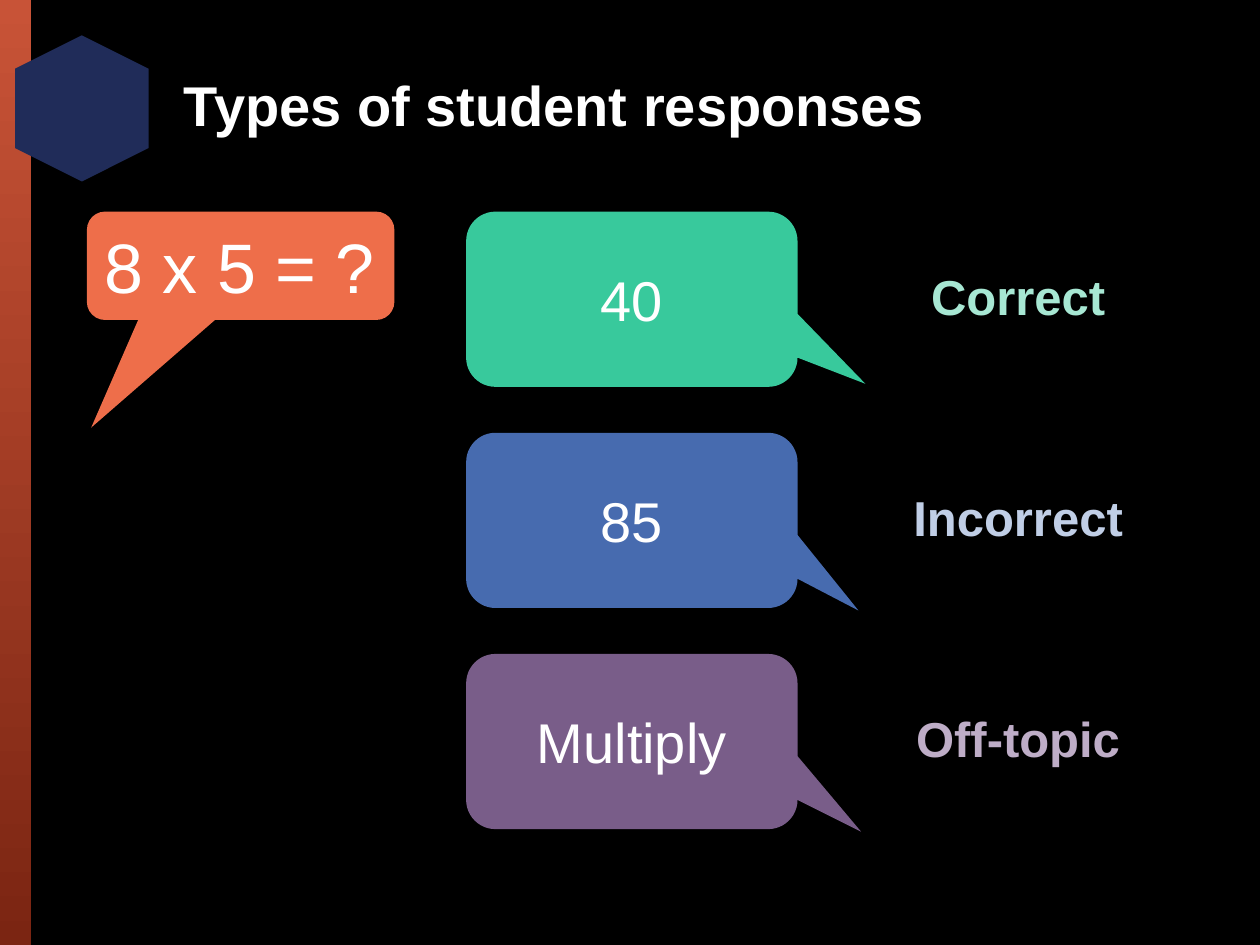
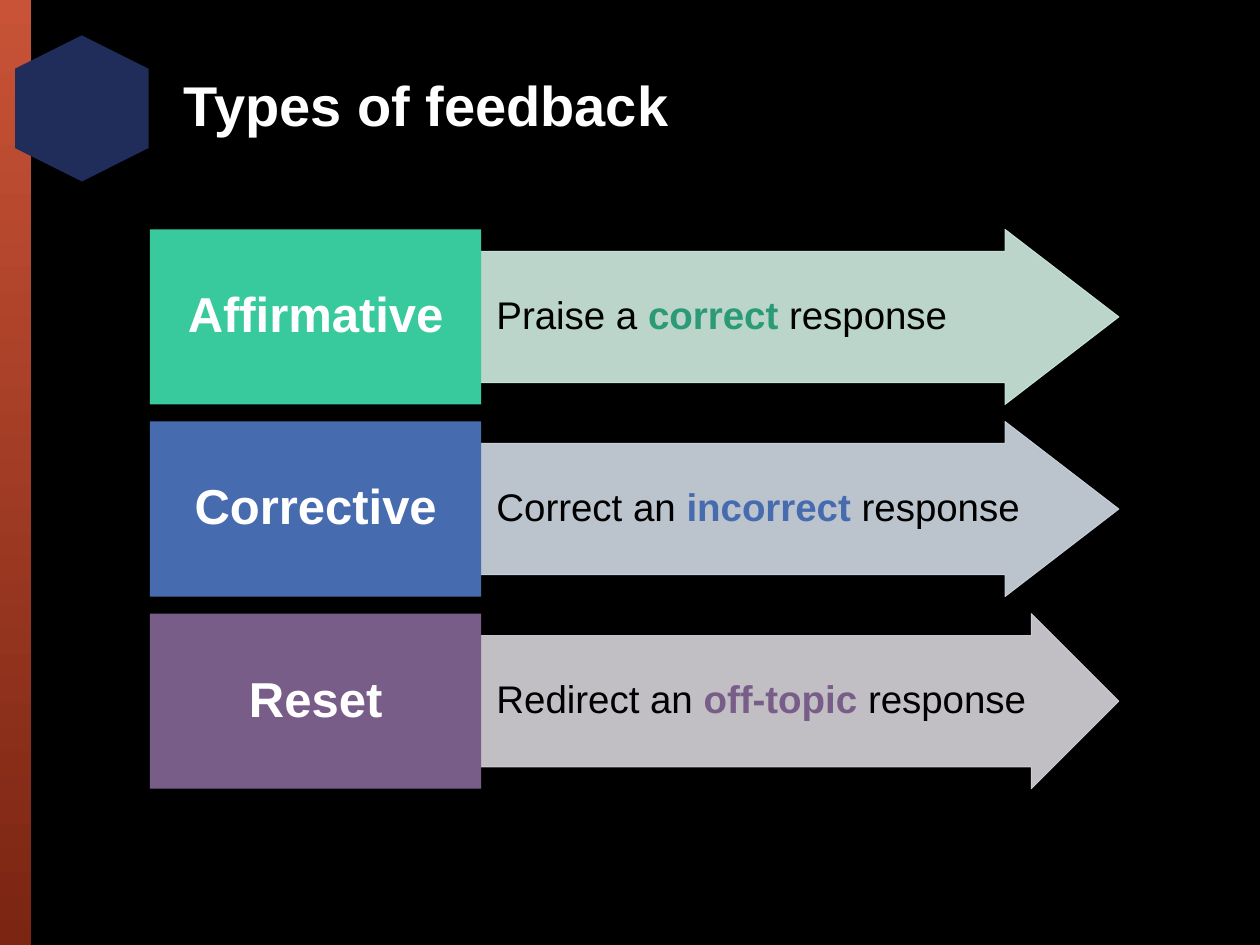
from lxml import etree
from pptx import Presentation
from pptx.dml.color import RGBColor
from pptx.enum.shapes import MSO_SHAPE as Shape
from pptx.enum.text import MSO_ANCHOR as Anchor, MSO_AUTO_SIZE as AutoSize, PP_ALIGN as Align
from pptx.oxml.ns import qn
from pptx.util import Inches, Pt

FONT = "Arial"
BLACK = RGBColor(0x00, 0x00, 0x00)
WHITE = RGBColor(0xFF, 0xFF, 0xFF)
BAND_TOP = RGBColor(0xC8, 0x53, 0x37)
BAND_BOTTOM = RGBColor(0x7B, 0x25, 0x12)
NAVY = RGBColor(0x20, 0x2C, 0x59)
ORANGE = RGBColor(0xEE, 0x6E, 0x4A)
GREEN = RGBColor(0x38, 0xC9, 0x9C)
DARK_GREEN = RGBColor(0x2A, 0x9A, 0x77)
LIGHT_GREEN = RGBColor(0xA7, 0xE7, 0xD3)
PALE_GREEN = RGBColor(0xD0, 0xED, 0xE1)
BLUE = RGBColor(0x47, 0x6B, 0xAF)
LIGHT_BLUE = RGBColor(0xC0, 0xCE, 0xE6)
PALE_BLUE = RGBColor(0xD0, 0xD9, 0xE4)
PURPLE = RGBColor(0x79, 0x5D, 0x89)
LIGHT_PURPLE = RGBColor(0xBE, 0xAD, 0xC7)
PALE_PURPLE = RGBColor(0xD7, 0xD3, 0xDA)

ROW_WIDTH, ROW_HEIGHT = 2.63, 1.39


def write(shape, runs, size, align=Align.CENTER, anchor=Anchor.MIDDLE, spacing=None):
    """Fill one paragraph with (text, colour, bold) runs."""
    frame = shape.text_frame
    frame.word_wrap = True
    frame.vertical_anchor = anchor
    paragraph = frame.paragraphs[0]
    paragraph.alignment = align
    paragraph.line_spacing = spacing
    for text, color, bold in runs:
        run = paragraph.add_run()
        run.text = text
        run.font.name = FONT
        run.font.size = Pt(size)
        run.font.bold = bold
        run.font.color.rgb = color


def add_filled(slide, kind, box, color, adjustments=()):
    shape = slide.shapes.add_shape(kind, *map(Inches, box))
    shape.shadow.inherit = False
    shape.fill.solid()
    shape.fill.fore_color.rgb = color
    shape.line.fill.background()
    for index, value in enumerate(adjustments):
        shape.adjustments[index] = value
    return shape


def add_titled_slide(presentation, title):
    """Black slide with the side band, the hexagon and a title."""
    slide = presentation.slides.add_slide(presentation.slide_layouts[5])
    slide.background.fill.solid()
    slide.background.fill.fore_color.rgb = BLACK

    band = add_filled(slide, Shape.RECTANGLE, (0, 0, 0.25, 7.5), BAND_TOP)
    band.fill.gradient()
    band.fill.gradient_angle = 270
    for stop, color in zip(band.fill.gradient_stops, (BAND_TOP, BAND_BOTTOM)):
        stop.color.rgb = color
    hexagon = add_filled(slide, Shape.HEXAGON, (0.07, 0.33, 1.16, 1.06), NAVY)
    hexagon.rotation = 270

    heading = slide.shapes.title
    heading.left, heading.top = Inches(1.36), Inches(0.4)
    heading.width, heading.height = Inches(8.25), Inches(0.92)
    write(heading, [(title, WHITE, True)], 32, Align.LEFT, spacing=0.9)
    return slide


def add_question(slide, box):
    callout = add_filled(slide, Shape.ROUNDED_RECTANGULAR_CALLOUT, box, ORANGE,
                         (-0.486, 1.494, 0.167))
    write(callout, [("8 x 5 = ?", WHITE, False)], 40, Align.LEFT, Anchor.TOP)
    callout.text_frame.word_wrap = False
    callout.text_frame.auto_size = AutoSize.SHAPE_TO_FIT_TEXT


def add_response(slide, left, top, answer, verdict, color, verdict_color, tail):
    """Answer callout with its verdict to the right."""
    callout = add_filled(slide, Shape.ROUNDED_RECTANGULAR_CALLOUT,
                         (left, top, ROW_WIDTH, ROW_HEIGHT), color, (*tail, 0.167))
    write(callout, [(answer, WHITE, False)], 32)
    label = slide.shapes.add_textbox(Inches(left + 3.29), Inches(top),
                                     Inches(2.18), Inches(ROW_HEIGHT))
    write(label, [(verdict, verdict_color, True)], 28, spacing=0.9)


def set_alpha(shape, percent):
    """Make the solid fill and line of a shape partly transparent."""
    for color in shape.fill._xPr.iter(qn("a:srgbClr")):
        etree.SubElement(color, qn("a:alpha")).set("val", str(percent * 1000))


def add_feedback(slide, left, top, name, words, color, accent, pale, head):
    """Arrow with a description, starting behind its name block."""
    arrow = add_filled(slide, Shape.RIGHT_ARROW, (left + 2.5, top, 5.19, ROW_HEIGHT),
                       pale, (0.75, head))
    arrow.line.color.rgb = pale
    arrow.line.width = Pt(0.5)
    set_alpha(arrow, 90)
    before, key, after = words
    write(arrow, [(before, BLACK, False), (key, accent, True), (after, BLACK, False)],
          22, Align.LEFT, spacing=0.9)
    arrow.text_frame.margin_left = Inches(0.25)
    arrow.text_frame.margin_right = 0
    block = add_filled(slide, Shape.RECTANGLE, (left, top, ROW_WIDTH, ROW_HEIGHT), color)
    write(block, [(name, WHITE, True)], 28, spacing=0.9)


def build_responses(presentation):
    slide = add_titled_slide(presentation, "Types of student responses")
    add_question(slide, (0.69, 1.68, 2.44, 0.86))
    responses = [
        ("40", "Correct", GREEN, LIGHT_GREEN, (0.705, 0.483)),
        ("85", "Incorrect", BLUE, LIGHT_BLUE, (0.684, 0.515)),
        ("Multiply", "Off-topic", PURPLE, LIGHT_PURPLE, (0.692, 0.515)),
    ]
    for row, response in enumerate(responses):
        add_response(slide, 3.7, 1.68 + row * 1.755, *response)


def build_feedback(presentation):
    slide = add_titled_slide(presentation, "Types of feedback")
    kinds = [
        ("Affirmative", ("Praise a ", "correct", " response"),
         GREEN, DARK_GREEN, PALE_GREEN, 0.65),
        ("Corrective", ("Correct an ", "incorrect", " response"),
         BLUE, BLUE, PALE_BLUE, 0.65),
        ("Reset", ("Redirect an ", "off-topic ", "response"),
         PURPLE, PURPLE, PALE_PURPLE, 0.5),
    ]
    for row, kind in enumerate(kinds):
        add_feedback(slide, 1.19, 1.82 + row * 1.525, *kind)


def main():
    presentation = Presentation()
    presentation.slide_width, presentation.slide_height = Inches(10), Inches(7.5)
    build_responses(presentation)
    build_feedback(presentation)
    presentation.save("out.pptx")


if __name__ == "__main__":
    main()
